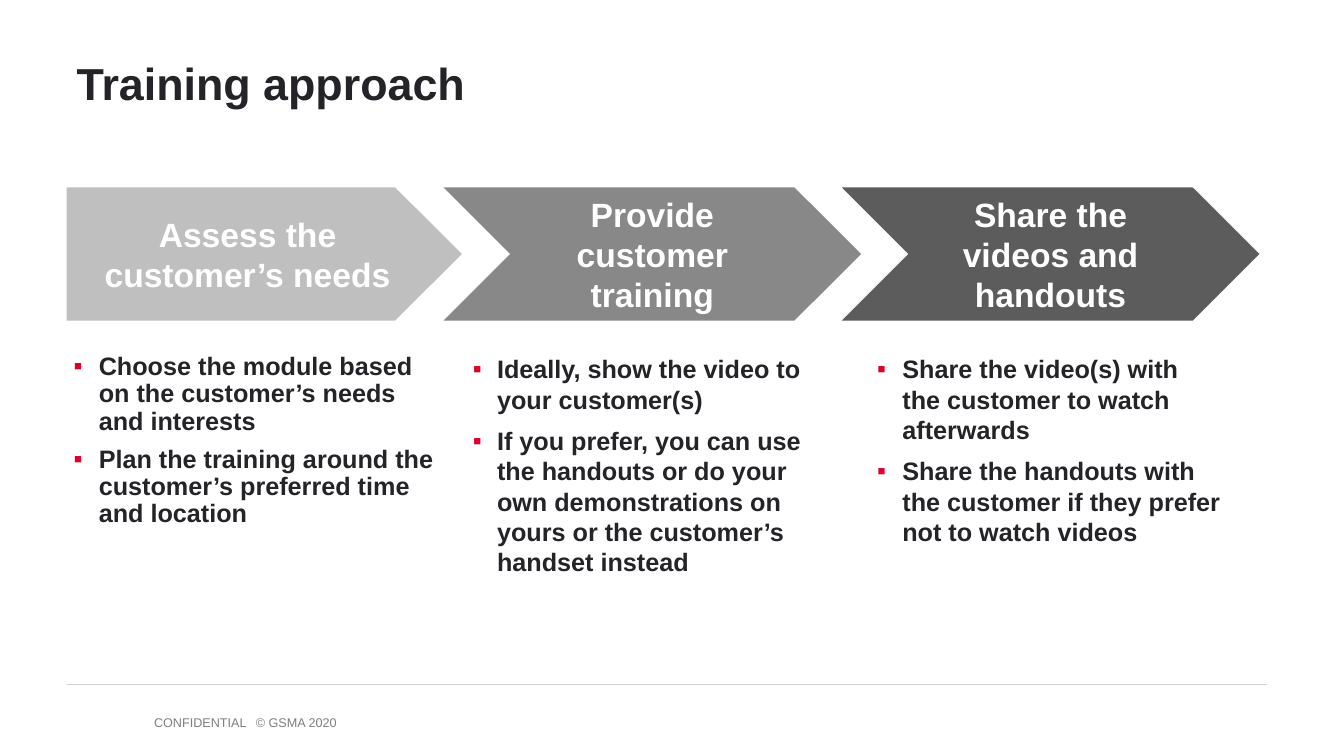
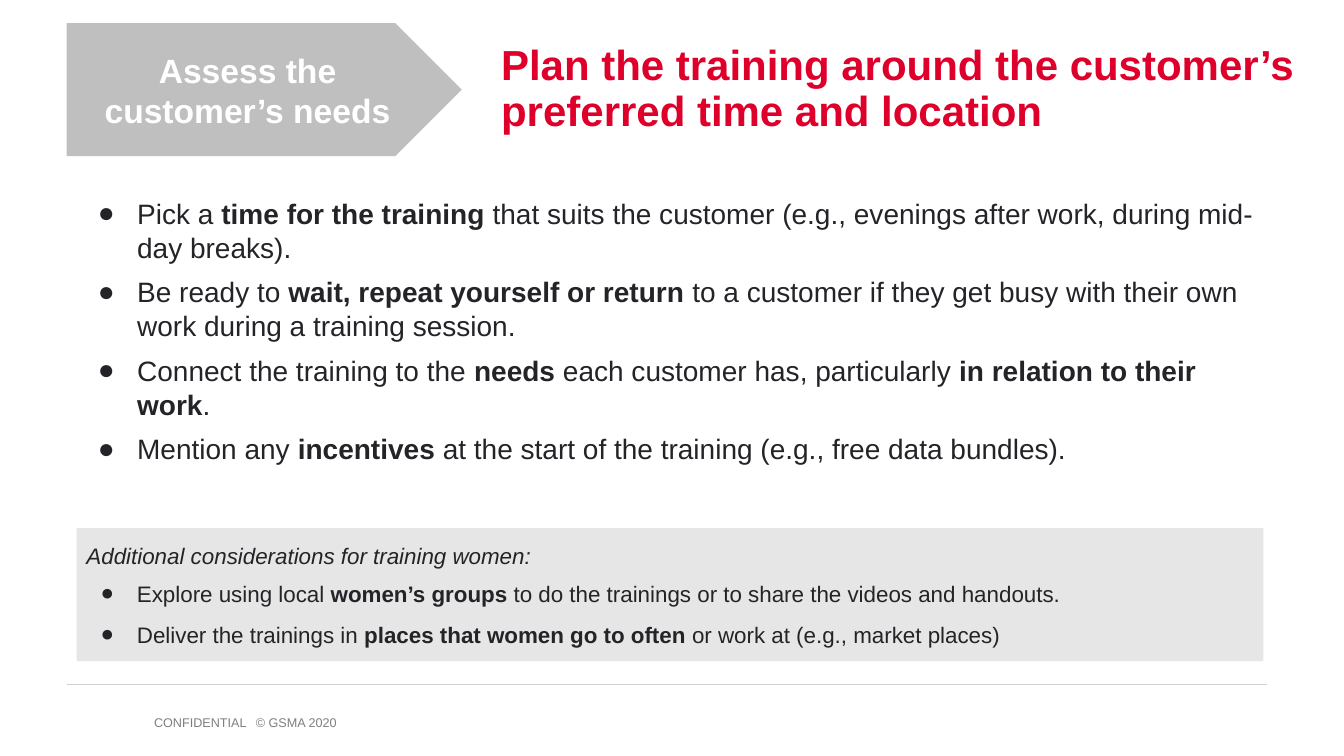
import dataclasses

import lxml.etree
import pptx
import pptx.dml.color
import pptx.enum.shapes
import pptx.enum.text
import pptx.oxml.ns
import pptx.util

Inches = pptx.util.Inches
Pt = pptx.util.Pt
MSO_SHAPE = pptx.enum.shapes.MSO_SHAPE
ALIGN = pptx.enum.text.PP_ALIGN
ANCHOR = pptx.enum.text.MSO_ANCHOR


@dataclasses.dataclass(frozen=True)
class Theme:
    """Colours, font and type sizes of the presentation."""
    font: str = "Arial"
    ink: str = "242428"
    red: str = "DE002B"
    white: str = "FFFFFF"
    footer: str = "7F7F7F"
    rule: str = "D0CECE"
    panel: str = "E7E6E6"
    steps: tuple = ("BFBFBF", "888888", "5C5C5C")
    title_size: int = 32
    topic_size: int = 30
    step_size: int = 24
    body_size: int = 20
    column_size: int = 18
    panel_size: int = 16
    footer_size: int = 9


@dataclasses.dataclass(frozen=True)
class Box:
    """A rectangle in inches."""
    left: float
    top: float
    width: float
    height: float

    def lengths(self):
        """Return the four sides as lengths."""
        return [Inches(side) for side in dataclasses.astuple(self)]


@dataclasses.dataclass(frozen=True)
class Bullet:
    """Sign, colour and indents of a list."""
    sign: str
    color: str
    indent: float
    hanging: float


THEME = Theme()
MARGIN = 0.66
STEP_HEIGHT = 1.32
FIRST_STEP = "Assess the customer’s needs"


def rgb(color):
    """Turn a hex string into a colour."""
    return pptx.dml.color.RGBColor.from_string(color)


def add_child(parent, tag, **attributes):
    """Append a drawing element to a parent."""
    child = lxml.etree.SubElement(parent, pptx.oxml.ns.qn(tag))
    for name, value in attributes.items():
        child.set(name, str(value))
    return child


def place(shape, box):
    """Move a placeholder to a box."""
    shape.left, shape.top, shape.width, shape.height = box.lengths()


def prepare_frame(shape, anchor=ANCHOR.TOP, vertical_inset=0.05):
    """Set wrapping, insets and anchor, and return the text frame."""
    frame = shape.text_frame
    frame.word_wrap = True
    frame.auto_size = pptx.enum.text.MSO_AUTO_SIZE.NONE
    frame.vertical_anchor = anchor
    frame.margin_left = frame.margin_right = Inches(0.1)
    frame.margin_top = frame.margin_bottom = Inches(vertical_inset)
    return frame


def add_run(paragraph, text, size, color, bold=False, italic=False):
    """Add one formatted run."""
    run = paragraph.add_run()
    run.text = text
    run.font.name = THEME.font
    run.font.size = Pt(size)
    run.font.color.rgb = rgb(color)
    run.font.bold = bold
    run.font.italic = italic


def format_paragraph(paragraph, before=0, after=0, line=1.0, align=ALIGN.LEFT):
    """Set spacing and alignment of a paragraph."""
    paragraph.space_before = Pt(before)
    paragraph.space_after = Pt(after)
    paragraph.line_spacing = line
    paragraph.alignment = align


def set_bullet(paragraph, bullet):
    """Give a paragraph its bullet and hanging indent."""
    properties = paragraph._p.get_or_add_pPr()
    properties.set("marL", str(Inches(bullet.indent)))
    properties.set("indent", str(-Inches(bullet.hanging)))
    color = add_child(properties, "a:buClr")
    add_child(color, "a:srgbClr", val=bullet.color)
    add_child(properties, "a:buFont", typeface=THEME.font)
    add_child(properties, "a:buChar", char=bullet.sign)


def add_item(paragraph, parts, bullet, size):
    """Write a list item whose every second part is bold."""
    set_bullet(paragraph, bullet)
    for index, text in enumerate(parts):
        add_run(paragraph, text, size, THEME.ink, bold=index % 2 == 1)


def next_paragraph(frame, index):
    """Return the first paragraph or a new one."""
    return frame.add_paragraph() if index else frame.paragraphs[0]


def fill_list(shape, box, items, bullet, size, line=1.0):
    """Fill a body placeholder with a bulleted list."""
    place(shape, box)
    frame = prepare_frame(shape)
    for index, parts in enumerate(items):
        paragraph = next_paragraph(frame, index)
        add_item(paragraph, parts, bullet, size)
        format_paragraph(paragraph, before=8 if index else 0, line=line)


def fill_title(slide, box, text, size, color):
    """Write the slide title."""
    place(slide.shapes.title, box)
    paragraph = prepare_frame(slide.shapes.title).paragraphs[0]
    format_paragraph(paragraph, line=0.9)
    add_run(paragraph, text, size, color, bold=True)


def add_filled_shape(slide, kind, box, color):
    """Add a flat shape without outline."""
    shape = slide.shapes.add_shape(kind, *box.lengths())
    shape.shadow.inherit = False
    shape.fill.solid()
    shape.fill.fore_color.rgb = rgb(color)
    shape.line.fill.background()
    return shape


def add_step(slide, kind, box, text, color):
    """Add one arrow of the process."""
    shape = add_filled_shape(slide, kind, box, color)
    shape.adjustments[0] = 0.5
    paragraph = prepare_frame(shape, ANCHOR.MIDDLE).paragraphs[0]
    format_paragraph(paragraph, align=ALIGN.CENTER)
    add_run(paragraph, text, THEME.step_size, THEME.white, bold=True)


def add_first_step(slide, top):
    """Add the opening arrow of the process."""
    box = Box(MARGIN, top, 3.92, STEP_HEIGHT)
    add_step(slide, MSO_SHAPE.PENTAGON, box, FIRST_STEP, THEME.steps[0])


def add_panel(slide, box, heading, items):
    """Add the grey panel with a heading and a list."""
    shape = add_filled_shape(slide, MSO_SHAPE.RECTANGLE, box, THEME.panel)
    frame = prepare_frame(shape, ANCHOR.MIDDLE, vertical_inset=0.1)
    format_paragraph(frame.paragraphs[0])
    add_run(frame.paragraphs[0], heading, THEME.panel_size, THEME.ink, italic=True)
    bullet = Bullet("●", THEME.ink, 0.5, 0.36)
    for before, after, parts in zip((8, 10), (0, 10), items):
        paragraph = frame.add_paragraph()
        add_item(paragraph, parts, bullet, THEME.panel_size)
        format_paragraph(paragraph, before, after)


def add_footer(slide, box):
    """Add the rule and the copyright line."""
    rule = slide.shapes.add_connector(
        pptx.enum.shapes.MSO_CONNECTOR.STRAIGHT,
        Inches(MARGIN), Inches(box.top - 0.25), Inches(12.57), Inches(box.top - 0.25))
    rule.line.color.rgb = rgb(THEME.rule)
    rule.line.width = Pt(0.75)
    add_child(rule._element.spPr, "a:effectLst")
    paragraph = prepare_frame(slide.shapes.add_textbox(*box.lengths())).paragraphs[0]
    stops = add_child(paragraph._p.get_or_add_pPr(), "a:tabLst")
    add_child(stops, "a:tab", pos=Inches(1.01), algn="l")
    format_paragraph(paragraph)
    add_run(paragraph, "CONFIDENTIAL\t© GSMA 2020", THEME.footer_size, THEME.footer)


def start_slide(presentation, layout_index):
    """Add a slide with the shared footer."""
    slide = presentation.slides.add_slide(presentation.slide_layouts[layout_index])
    add_footer(slide, Box(1.43, 7.04, 3.16, 0.25))
    return slide


def build_approach(presentation):
    """Build the slide with three steps and their lists."""
    slide = start_slide(presentation, 4)
    fill_title(slide, Box(MARGIN, 0.56, 11.89, 0.8), "Training approach",
               THEME.title_size, THEME.ink)
    top = 1.86
    add_first_step(slide, top)
    later_steps = ("Provide customer training", "Share the videos and handouts")
    for index, text in enumerate(later_steps):
        box = Box(4.4 + 3.95 * index, top, 4.14, STEP_HEIGHT)
        add_step(slide, MSO_SHAPE.CHEVRON, box, text, THEME.steps[index + 1])
    columns = (
        (0.63, 3.77, 0.26, 0.9, (
            "Choose the module based on the customer’s needs and interests",
            "Plan the training around the customer’s preferred time and location")),
        (4.58, 3.61, 0.24, 1.0, (
            "Ideally, show the video to your customer(s)",
            "If you prefer, you can use the handouts or do your own demonstrations "
            "on yours or the customer’s handset instead")),
        (8.6, 3.61, 0.26, 1.0, (
            "Share the video(s) with the customer to watch afterwards",
            "Share the handouts with the customer if they prefer not to watch videos")),
    )
    bodies = list(slide.placeholders)[1:]
    for body, (left, width, hanging, line, texts) in zip(bodies, columns):
        fill_list(body, Box(left, top + 1.6, width, 2.2),
                  [("", text) for text in texts],
                  Bullet("▪", THEME.red, 0.25, hanging), THEME.column_size, line)
    spare = bodies[-1].element
    spare.getparent().remove(spare)


def build_planning(presentation):
    """Build the slide on planning time and location."""
    slide = start_slide(presentation, 1)
    add_first_step(slide, 0.23)
    fill_title(slide, Box(4.87, 0.39, 8.08, 0.8),
               "Plan the training around the customer’s preferred time and location",
               THEME.topic_size, THEME.red)
    fill_list(slide.placeholders[1], Box(0.76, 1.9, 11.84, 2.79), (
        ("Pick a ", "time for the training",
         " that suits the customer (e.g., evenings after work, during mid-day breaks)."),
        ("Be ready to ", "wait, repeat yourself or return",
         " to a customer if they get busy with their own work during a training session."),
        ("Connect the training to the ", "needs", " each customer has, particularly ",
         "in relation to their work", "."),
        ("Mention any ", "incentives",
         " at the start of the training (e.g., free data bundles)."),
    ), Bullet("●", THEME.ink, 0.5, 0.39), THEME.body_size)
    add_panel(slide, Box(0.76, 5.24, 11.77, STEP_HEIGHT),
              "Additional considerations for training women:", (
        ("Explore using local ", "women’s groups",
         " to do the trainings or to share the videos and handouts."),
        ("Deliver the trainings in ", "places that women go to often",
         " or work at (e.g., market places)"),
    ))


def main():
    """Build and save the presentation."""
    presentation = pptx.Presentation()
    presentation.slide_width = Inches(13.33)
    presentation.slide_height = Inches(7.5)
    build_approach(presentation)
    build_planning(presentation)
    presentation.save("out.pptx")


if __name__ == "__main__":
    main()
